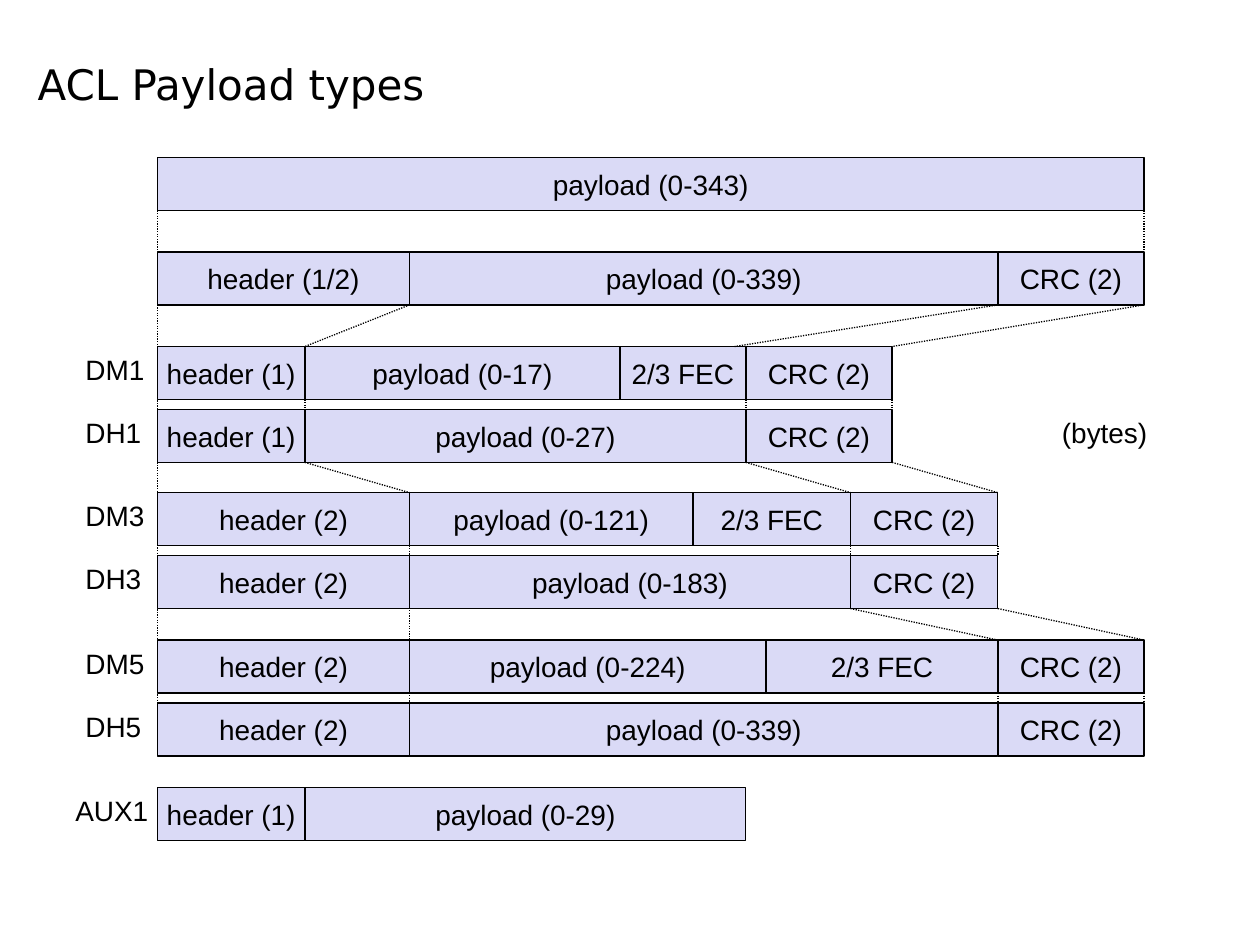
from dataclasses import dataclass

from lxml import etree
from pptx import Presentation
from pptx.dml.color import RGBColor
from pptx.enum.dml import MSO_LINE
from pptx.enum.shapes import MSO_CONNECTOR, MSO_SHAPE
from pptx.enum.text import MSO_ANCHOR, MSO_AUTO_SIZE, PP_ALIGN
from pptx.oxml.ns import qn
from pptx.util import Inches, Pt

RECT = MSO_SHAPE.RECTANGLE
STRAIGHT = MSO_CONNECTOR.STRAIGHT
DOTS = MSO_LINE.ROUND_DOT
TOP, MIDDLE, BOTTOM = MSO_ANCHOR.TOP, MSO_ANCHOR.MIDDLE, MSO_ANCHOR.BOTTOM
GROW, FIXED = MSO_AUTO_SIZE.SHAPE_TO_FIT_TEXT, MSO_AUTO_SIZE.NONE
LEFT, CENTER = PP_ALIGN.LEFT, PP_ALIGN.CENTER


@dataclass(frozen=True)
class Theme:
    ink: RGBColor = RGBColor(0x00, 0x00, 0x00)
    fill: RGBColor = RGBColor(0xDA, 0xDA, 0xF6)
    head_font: str = "DejaVu Sans"
    body_font: str = "Arial"
    head_size: float = 24
    body_size: float = 16
    line: float = 0.75


class Painter:
    def __init__(self, slide, theme):
        self.shapes = slide.shapes
        self.theme = theme

    def set_text(self, shape, text, font, size, align, anchor):
        frame = shape.text_frame
        frame.text = text
        frame.vertical_anchor = anchor
        frame.word_wrap = False
        para = frame.paragraphs[0]
        para.alignment = align
        style = para.runs[0].font
        style.name, style.size = font, Pt(size)
        style.color.rgb = self.theme.ink
        return frame

    def title(self, text, left, top, width, height):
        box = self.shapes.add_textbox(*map(Inches, (left, top, width, height)))
        frame = self.set_text(box, text, self.theme.head_font,
                              self.theme.head_size, LEFT, BOTTOM)
        frame.word_wrap = True
        frame.auto_size = FIXED

    def label(self, text, left, top, width):
        box = self.shapes.add_textbox(*map(Inches, (left, top, width, 0.37)))
        frame = self.set_text(box, text, self.theme.body_font,
                              self.theme.body_size, LEFT, TOP)
        frame.auto_size = GROW

    def field(self, text, left, top, width, height):
        box = self.shapes.add_shape(
            RECT, *map(Inches, (left, top, width, height)))
        box.shadow.inherit = False
        box.fill.solid()
        box.fill.fore_color.rgb = self.theme.fill
        box.line.color.rgb = self.theme.ink
        box.line.width = Pt(self.theme.line)
        self.set_text(box, text, self.theme.body_font,
                      self.theme.body_size, CENTER, MIDDLE)

    def packet(self, top, fields):
        """Draw fields side by side, each given by its text and right edge."""
        left = START
        for text, right in fields:
            self.field(text, left, top, right - left, ROW)
            left = right

    def link(self, x1, y1, x2, y2):
        line = self.shapes.add_connector(
            STRAIGHT, *map(Inches, (x1, y1, x2, y2)))
        line.line.color.rgb = self.theme.ink
        line.line.width = Pt(self.theme.line)
        line.line.dash_style = DOTS
        etree.SubElement(line._element.spPr, qn("a:effectLst"))


START, ROW = 1.25, 0.42
SHORT, LONG = 2.42, 3.25        # right edges of 1 and 2 byte headers
DATA1, DATA3, DATA5 = 5.92, 6.75, 7.92
END1, END3, END5 = 7.08, 7.92, 9.08
FULL, SPLIT = 1.25, 2
DM1, DH1, DM3, DH3, DM5, DH5, AUX1 = 2.75, 3.25, 3.91, 4.41, 5.08, 5.58, 6.25

HEAD1, HEAD2 = ("header (1)", SHORT), ("header (2)", LONG)
FEC, CRC = "2/3 FEC", "CRC (2)"

PACKETS = [
    (FULL, [("payload (0-343)", END5)]),
    (SPLIT, [("header (1/2)", LONG), ("payload (0-339)", DATA5), (CRC, END5)]),
    (DM1, [HEAD1, ("payload (0-17)", 4.92), (FEC, DATA1), (CRC, END1)]),
    (DH1, [HEAD1, ("payload (0-27)", DATA1), (CRC, END1)]),
    (DM3, [HEAD2, ("payload (0-121)", 5.5), (FEC, DATA3), (CRC, END3)]),
    (DH3, [HEAD2, ("payload (0-183)", DATA3), (CRC, END3)]),
    (DM5, [HEAD2, ("payload (0-224)", 6.08), (FEC, DATA5), (CRC, END5)]),
    (DH5, [HEAD2, ("payload (0-339)", DATA5), (CRC, END5)]),
    (AUX1, [HEAD1, ("payload (0-29)", DATA1)]),
]

LABELS = [
    ("DM1", 0.58, DM1, 0.67), ("DH1", 0.58, DH1, 0.64),
    ("DM3", 0.58, DM3, 0.67), ("DH3", 0.58, DH3, 0.64),
    ("DM5", 0.58, DM5, 0.67), ("DH5", 0.58, DH5, 0.64),
    ("AUX1", 0.5, AUX1, 0.78), ("(bytes)", 8.33, DH1, 0.88),
]

# Each link: upper row, x at its bottom, lower row, x at its top
LINKS = [
    (FULL, START, SPLIT, START), (FULL, END5, SPLIT, END5),
    (SPLIT, START, DH5, START),
    (SPLIT, LONG, DM1, SHORT), (SPLIT, DATA5, DM1, 5.83),
    (SPLIT, END5, DM1, END1),
    (DM1, SHORT, DH1, SHORT), (DM1, DATA1, DH1, DATA1),
    (DM1, END1, DH1, END1),
    (DH1, SHORT, DM3, LONG), (DH1, DATA1, DM3, DATA3),
    (DH1, END1, DM3, END3),
    (DM3, LONG, DH5, LONG), (DM3, DATA3, DH3, DATA3),
    (DM3, END3, DH3, END3),
    (DH3, DATA3, DM5, DATA5), (DH3, END3, DM5, END5),
    (DM5, DATA5, DH5, DATA5), (DM5, END5, DH5, END5),
]


def main():
    deck = Presentation()
    deck.slide_width, deck.slide_height = Inches(10), Inches(7.5)
    paint = Painter(deck.slides.add_slide(deck.slide_layouts[6]), Theme())

    paint.title("ACL Payload types", 0.2, 0, 6.61, 0.91)
    for top, fields in PACKETS:
        paint.packet(top, fields)
    for label in LABELS:
        paint.label(*label)
    for upper, x1, lower, x2 in LINKS:
        paint.link(x1, upper + ROW, x2, lower)

    deck.save("out.pptx")


if __name__ == "__main__":
    main()
